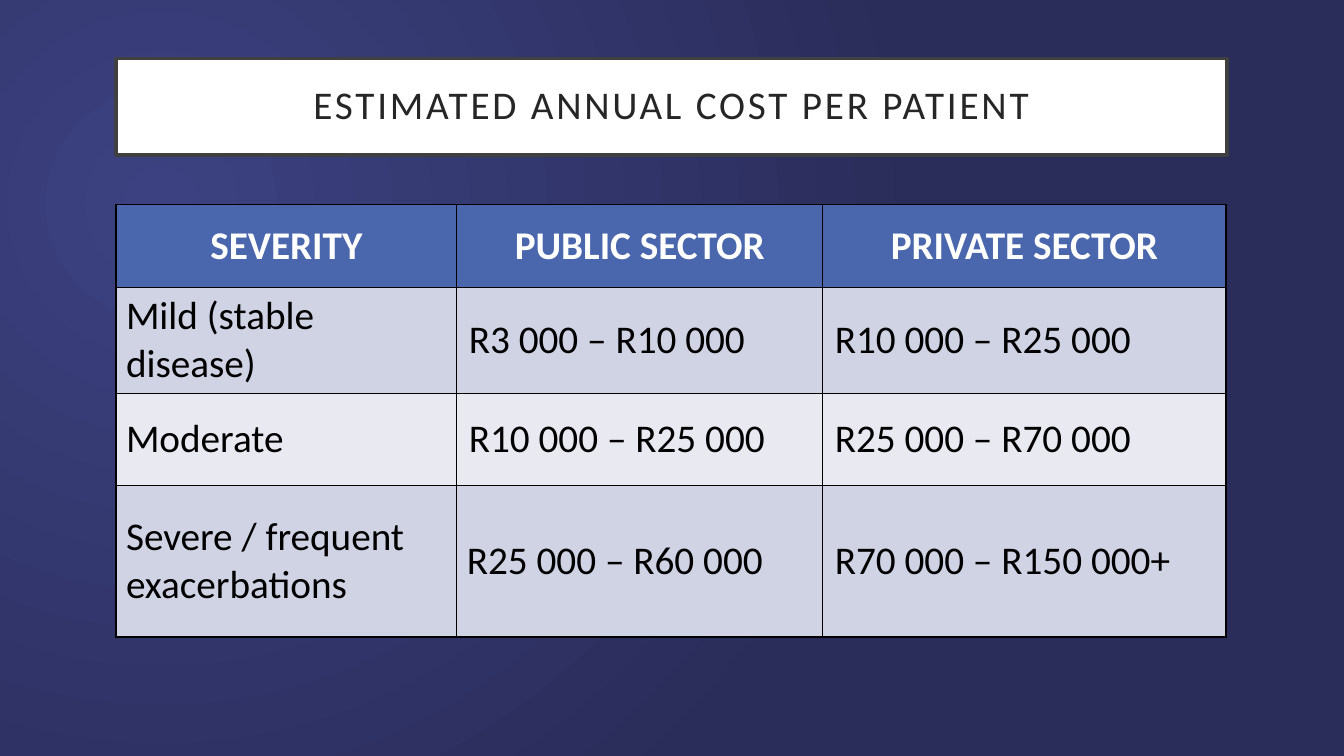
import pptx
import pptx.util
import pptx.dml.color
import pptx.enum.shapes
import pptx.enum.text
import pptx.oxml
import pptx.oxml.ns

Inches, Pt = pptx.util.Inches, pptx.util.Pt
RGBColor = pptx.dml.color.RGBColor
PP_ALIGN, MSO_ANCHOR = pptx.enum.text.PP_ALIGN, pptx.enum.text.MSO_ANCHOR

# Content
HEADING = "ESTIMATED ANNUAL COST PER PATIENT"
COSTS = [
    ("SEVERITY", "PUBLIC SECTOR", "PRIVATE SECTOR"),
    ("Mild (stable disease)", "R3 000 – R10 000", "R10 000 – R25 000"),
    ("Moderate", "R10 000 – R25 000", "R25 000 – R70 000"),
    ("Severe / frequent exacerbations", "R25 000 – R60 000", "R70 000 – R150 000+"),
]
TIGHT_CELL = (3, 1)  # keeps the standard cell margins

# Layout in inches
SLIDE_W, SLIDE_H = 13.33, 7.5
LEFT, WIDTH = 1.15, 11.02
HEADING_TOP, HEADING_H = 0.58, 0.96
COSTS_TOP = 2.03
COLUMN_WIDTHS = (3.38, 3.63, 4)
ROW_HEIGHTS = (0.82, 0.92, 0.92, 1.5)

# Style
FONT, SIZE = "Calibri", Pt(28)
GLOW, NIGHT = RGBColor(0x3C, 0x41, 0x81), RGBColor(0x2A, 0x2D, 0x59)
WHITE, BLACK = RGBColor(255, 255, 255), RGBColor(0, 0, 0)
FRAME, INK = RGBColor(0x40, 0x40, 0x40), RGBColor(0x26, 0x26, 0x26)
HEADER = RGBColor(0x4A, 0x66, 0xAC)
BANDS = (RGBColor(0xE9, 0xEA, 0xF1), RGBColor(0xD0, 0xD3, 0xE3))


def write(frame, text, colour, align, bold=False):
    frame.word_wrap = True
    paragraph = frame.paragraphs[0]
    paragraph.text = text
    paragraph.alignment = align
    font = paragraph.runs[0].font
    font.name, font.size, font.bold = FONT, SIZE, bold
    font.color.rgb = colour
    return paragraph


def add_borders(cell):
    properties = cell._tc.get_or_add_tcPr()
    for index, side in enumerate(("lnL", "lnR", "lnT", "lnB")):
        properties.insert(index, pptx.oxml.parse_xml(
            f'<a:{side} {pptx.oxml.ns.nsdecls("a")} w="{Pt(1)}"><a:solidFill>'
            f'<a:srgbClr val="{BLACK}"/></a:solidFill></a:{side}>'))


deck = pptx.Presentation()
deck.slide_width, deck.slide_height = Inches(SLIDE_W), Inches(SLIDE_H)
slide = deck.slides.add_slide(deck.slide_layouts[6])

# Background: circular glow from the upper left
backdrop = slide.background.fill
backdrop.gradient()
for stop, colour, position in zip(backdrop.gradient_stops, (GLOW, NIGHT), (0, 1)):
    stop.color.rgb, stop.position = colour, position
direction = slide._element.find(".//" + pptx.oxml.ns.qn("a:lin"))
direction.getparent().replace(direction, pptx.oxml.parse_xml(
    f'<a:path {pptx.oxml.ns.nsdecls("a")} path="circle">'
    '<a:fillToRect l="50000" t="55000" r="125000" b="100000"/></a:path>'))

# Heading
heading = slide.shapes.add_shape(
    pptx.enum.shapes.MSO_SHAPE.RECTANGLE,
    Inches(LEFT), Inches(HEADING_TOP), Inches(WIDTH), Inches(HEADING_H))
heading.shadow.inherit = False
heading.fill.solid()
heading.fill.fore_color.rgb = WHITE
heading.line.color.rgb = FRAME
heading.line.width = Pt(2.5)
frame = heading.text_frame
frame.vertical_anchor = MSO_ANCHOR.MIDDLE
frame.margin_left = frame.margin_right = Inches(0.2)
frame.margin_top = frame.margin_bottom = Inches(0.2)
heading_line = write(frame, HEADING, INK, PP_ALIGN.CENTER)
heading_line.line_spacing = 0.9
heading_line.runs[0].font._element.set("spc", "200")

# Cost table
costs = slide.shapes.add_table(
    len(COSTS), len(COLUMN_WIDTHS), Inches(LEFT), Inches(COSTS_TOP),
    Inches(WIDTH), Inches(sum(ROW_HEIGHTS))).table
for column, width in zip(costs.columns, COLUMN_WIDTHS):
    column.width = Inches(width)
for row, height in zip(costs.rows, ROW_HEIGHTS):
    row.height = Inches(height)

for r, entries in enumerate(COSTS):
    for c, entry in enumerate(entries):
        cell = costs.cell(r, c)
        is_header = r == 0
        cell.fill.solid()
        cell.fill.fore_color.rgb = HEADER if is_header else BANDS[r % 2]
        cell.vertical_anchor = MSO_ANCHOR.MIDDLE
        if r and c and (r, c) != TIGHT_CELL:
            cell.margin_left = cell.margin_right = Inches(0.12)
            cell.margin_top = cell.margin_bottom = Inches(0.08)
        write(cell.text_frame, entry, WHITE if is_header else BLACK,
              PP_ALIGN.CENTER if is_header else PP_ALIGN.LEFT, is_header)
        add_borders(cell)

deck.save("out.pptx")
